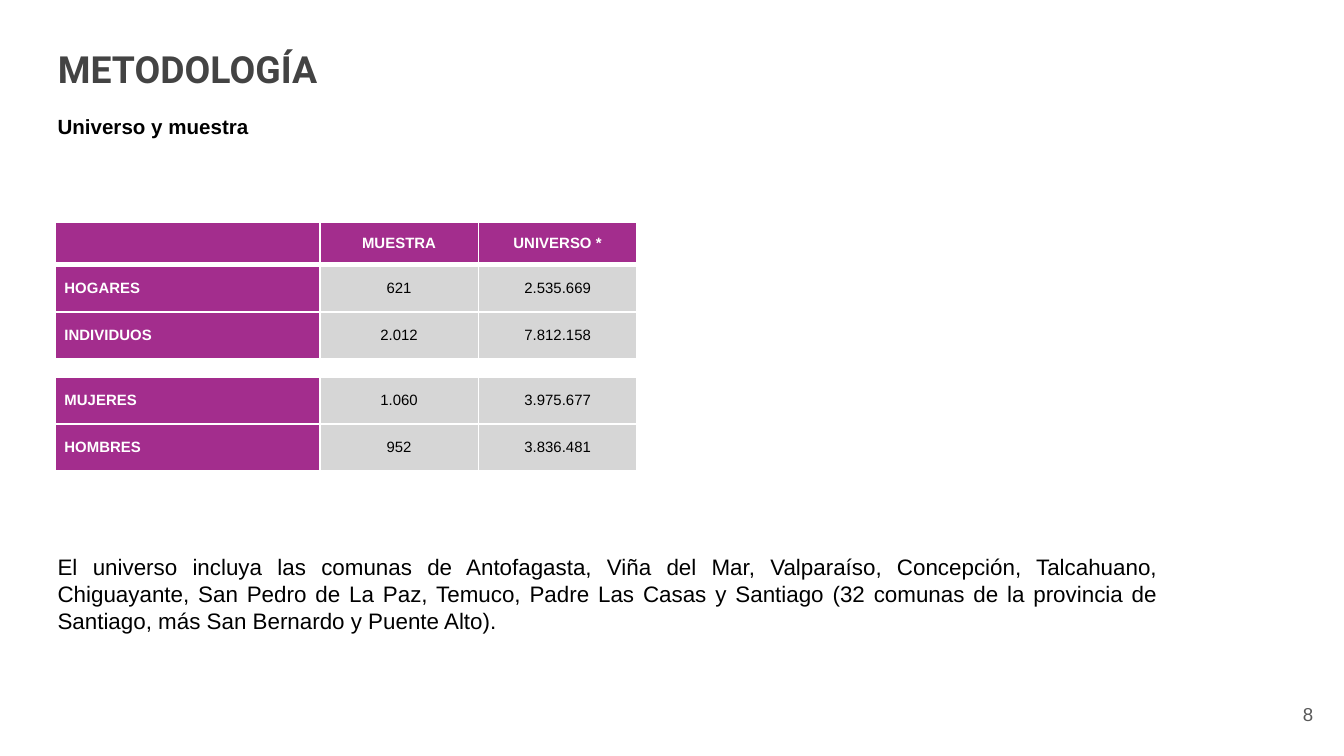
"""Builds the methodology slide with its sample and universe table."""
import lxml.etree
import pptx
import pptx.dml.color
import pptx.enum.text
import pptx.oxml.ns
import pptx.util

Inches = pptx.util.Inches
Pt = pptx.util.Pt
ALIGN = pptx.enum.text.PP_ALIGN
ANCHOR = pptx.enum.text.MSO_ANCHOR
AUTO_SIZE = pptx.enum.text.MSO_AUTO_SIZE

PURPLE, GREY, WHITE, BLACK = "A32D8D", "D6D6D6", "FFFFFF", "000000"
COLUMN_WIDTHS = [1.97, 1.18, 1.18]
HEADER_HEIGHT, DATA_HEIGHT, GAP_HEIGHT = 0.32, 0.35, 0.08
SAMPLE_ROWS = [
    ["", "MUESTRA", "UNIVERSO *"],
    ["HOGARES", "621", "2.535.669"],
    ["INDIVIDUOS", "2.012", "7.812.158"],
    None,
    ["MUJERES", "1.060", "3.975.677"],
    ["HOMBRES", "952", "3.836.481"],
    None,
]
COVERAGE = (
    "El universo incluya las comunas de Antofagasta, Viña del Mar, Valparaíso, "
    "Concepción, Talcahuano, Chiguayante, San Pedro de La Paz, Temuco, Padre Las "
    "Casas y Santiago (32 comunas de la provincia de Santiago, más San Bernardo y "
    "Puente Alto)."
)


def rgb(hex_code):
    """Return the colour for a hex string."""
    return pptx.dml.color.RGBColor.from_string(hex_code)


def write(frame, text, size, color, bold=False, align=ALIGN.LEFT, font="Arial"):
    """Add one formatted run to the first paragraph of a text frame."""
    paragraph = frame.paragraphs[0]
    paragraph.alignment = align
    run = paragraph.add_run()
    run.text = text
    run.font.name = font
    run.font.size = Pt(size)
    run.font.bold = bold
    run.font.color.rgb = rgb(color)


def add_label(slide, box, text, size, color, wrap=True, **style):
    """Add a text box and return its text frame."""
    frame = slide.shapes.add_textbox(*map(Inches, box)).text_frame
    frame.word_wrap = wrap
    write(frame, text, size, color, **style)
    return frame


def place_title(slide, text):
    """Move the title placeholder and fill it in."""
    title = slide.shapes.title
    title.left, title.top = Inches(0.33), Inches(0.24)
    title.width, title.height = Inches(8.81), Inches(0.63)
    frame = title.text_frame
    frame.margin_left = frame.margin_right = Inches(0.1)
    frame.margin_top = frame.margin_bottom = Inches(0.1)
    frame.vertical_anchor = ANCHOR.TOP
    write(frame, text, 20, "434343", bold=True, font="Roboto")


def draw_borders(cell, widths):
    """Draw white borders with the given point width on each side."""
    properties = cell._tc.get_or_add_tcPr()
    qn = pptx.oxml.ns.qn
    for side, width in widths.items():
        line = lxml.etree.SubElement(properties, qn(f"a:ln{side}"), w=str(Pt(width)))
        fill = lxml.etree.SubElement(line, qn("a:solidFill"))
        lxml.etree.SubElement(fill, qn("a:srgbClr"), val=WHITE)


def set_empty_size(cell, size):
    """Set the line size of a cell that holds no text."""
    paragraph = cell.text_frame.paragraphs[0]._p
    tag = pptx.oxml.ns.qn("a:endParaRPr")
    lxml.etree.SubElement(paragraph, tag, sz=str(size * 100))


def fill_cell(cell, text, row, column):
    """Format one cell of the sample table by its row and column."""
    heading = row == 0 or column == 0
    draw_borders(cell, {"L": 1, "R": 1, "T": 3 if row == 1 else 1,
                        "B": 3 if row == 0 else 1})
    cell.margin_left = cell.margin_right = Inches(0.07)
    cell.margin_top = cell.margin_bottom = 0
    cell.vertical_anchor = ANCHOR.MIDDLE
    if text:
        write(cell.text_frame, text, 8, WHITE if heading else BLACK, bold=heading,
              align=ALIGN.CENTER if column else ALIGN.LEFT)
    else:
        set_empty_size(cell, 8)
    if text is None:
        cell.fill.background()
    else:
        cell.fill.solid()
        cell.fill.fore_color.rgb = rgb(PURPLE if heading else GREY)


def add_sample_table(slide):
    """Add the table of sample and universe counts."""
    heights = [GAP_HEIGHT if values is None else DATA_HEIGHT for values in SAMPLE_ROWS]
    heights[0] = HEADER_HEIGHT
    table = slide.shapes.add_table(
        len(SAMPLE_ROWS), len(COLUMN_WIDTHS), Inches(0.41), Inches(1.65),
        Inches(sum(COLUMN_WIDTHS)), Inches(sum(heights))).table
    table.first_row = table.horz_banding = False
    for column, width in enumerate(COLUMN_WIDTHS):
        table.columns[column].width = Inches(width)
    for row, values in enumerate(SAMPLE_ROWS):
        table.rows[row].height = Inches(heights[row])
        for column, text in enumerate(values or [None] * len(COLUMN_WIDTHS)):
            fill_cell(table.cell(row, column), text, row, column)


def main():
    """Build and save the slide."""
    deck = pptx.Presentation()
    deck.slide_width, deck.slide_height = Inches(10), Inches(10 * 9 / 16)
    slide = deck.slides.add_slide(deck.slide_layouts[5])
    page_number = add_label(slide, (9.27, 5.1, 0.6, 0.43), "8", 10, "595959",
                            align=ALIGN.RIGHT)
    page_number.vertical_anchor = ANCHOR.MIDDLE
    page_number.margin_top = page_number.margin_bottom = Inches(0.1)
    subtitle = add_label(slide, (0.33, 0.8, 1.63, 0.29), "Universo y muestra", 11,
                         BLACK, wrap=False, bold=True)
    add_sample_table(slide)
    coverage = add_label(slide, (0.33, 4.07, 8.39, 0.71), COVERAGE, 12, BLACK,
                         align=ALIGN.JUSTIFY)
    subtitle.auto_size = coverage.auto_size = AUTO_SIZE.SHAPE_TO_FIT_TEXT
    place_title(slide, "METODOLOGÍA")
    deck.save("out.pptx")


if __name__ == "__main__":
    main()
